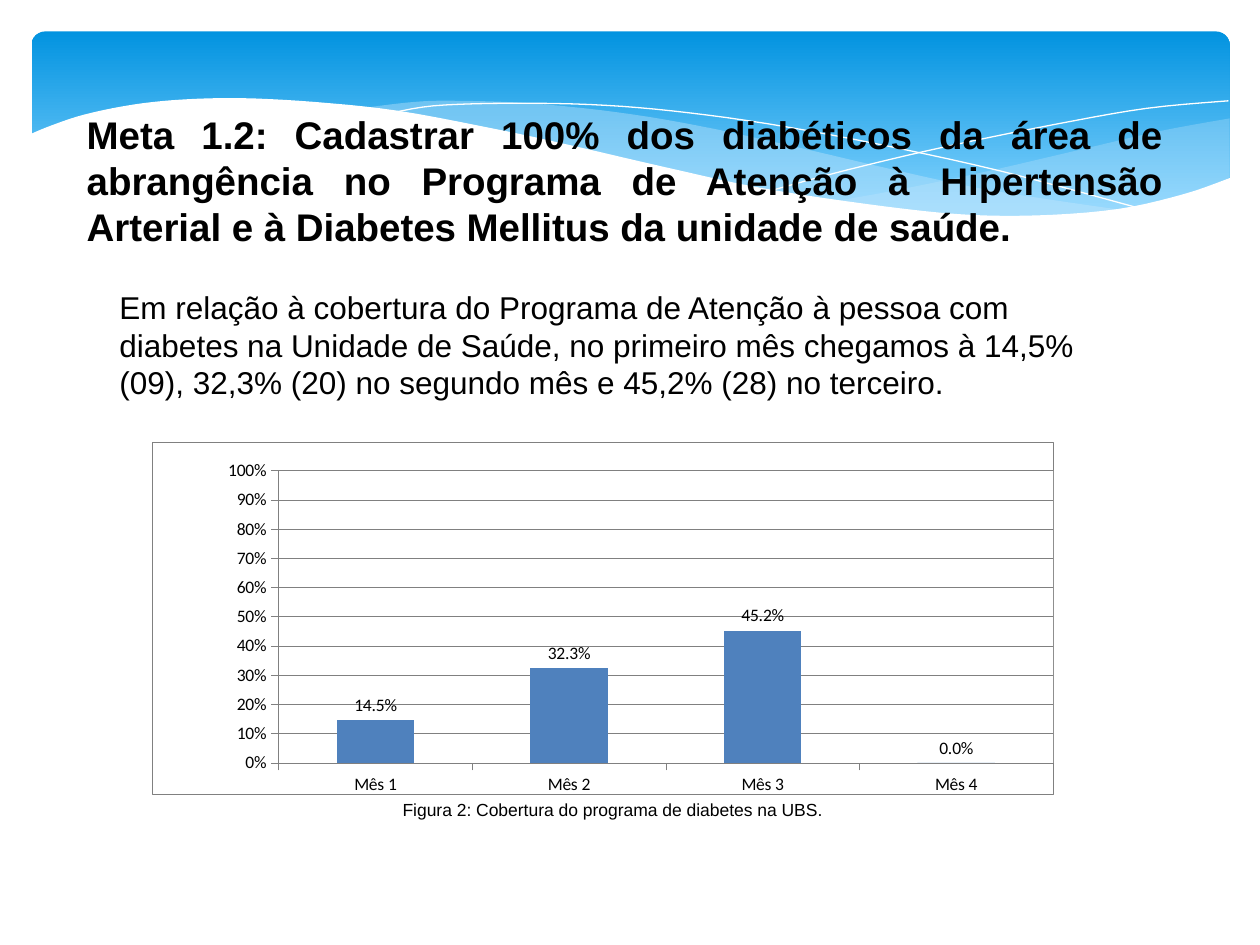
from lxml.etree import SubElement
from pptx import Presentation
from pptx.chart.data import CategoryChartData
from pptx.dml.color import RGBColor
from pptx.enum.chart import XL_CHART_TYPE, XL_LABEL_POSITION, XL_TICK_MARK
from pptx.enum.shapes import MSO_SHAPE
from pptx.enum.text import MSO_ANCHOR, PP_ALIGN
from pptx.oxml import parse_xml
from pptx.oxml.ns import nsdecls, qn
from pptx.util import Inches, Pt

WIDTH, HEIGHT = Inches(10), Inches(7.5)
COLORS = {"sky": "0293E0", "pale sky": "83D3FE", "mist": "C6E7FC", "white": "FFFFFF",
          "black": "000000", "gray": "808080", "bar": "4F81BD"}

# Curve points, in percent of the slide's width and height
RIGHT_WAVE_TOP = [(97.6, 12.53), (92.1, 13.87), (86.1, 15.73), (77.9, 18.27),
                  (70.6, 20.27), (66.1, 21.33)]
RIGHT_WAVE_BOTTOM = [(66.1, 21.33), (71.9, 22.27), (76.9, 22.8), (81.4, 22.93),
                     (86.3, 22.67), (91.3, 21.73), (94.9, 20.27), (97.6, 18.8)]
MIDDLE_WAVE_TOP = [(28.6, 11.47), (32.8, 10.8), (36.1, 10.67), (42, 10.93), (48.9, 11.87),
                   (55.5, 13.33), (62.9, 15.47), (70.6, 17.87), (77.5, 19.87),
                   (83.7, 21.2), (89.3, 22.27)]
MIDDLE_WAVE_BOTTOM = [(89.3, 22.27), (84.8, 22.8), (80.7, 23.07), (74.8, 22.67), (68, 21.73),
                      (60.1, 20), (53, 18), (44.9, 15.47), (38.3, 13.47), (34.2, 12.53),
                      (28.6, 11.47)]
FALLING_LINE = [(30.9, 12), (34.4, 11.2), (40.1, 10.93), (46.9, 11.07), (53.3, 11.73),
                (60.8, 13.07), (69.5, 15.2), (79.5, 18.13), (90.7, 22.13)]
RISING_LINE = [(61.3, 20.13), (67.2, 18), (74.8, 15.6), (83.6, 13.2), (91, 11.47),
               (97.5, 10.67)]
WHITE_WAVE_TOP = [(2.3, 14.27), (4, 13.33), (6.7, 12.13), (10.6, 11.07), (14.6, 10.53),
                  (19.3, 10.4), (25, 10.8), (31.6, 11.73), (39.1, 13.6), (44.7, 15.2),
                  (52.9, 17.73), (60.3, 19.87), (68.8, 21.6), (76.1, 22.67), (82.3, 22.8),
                  (88.7, 22.13), (94, 20.53), (97.7, 18.8)]
WHITE_WAVE_BASE = [(97.7, 29.87), (2.3, 29.87)]


def color(name):
    return RGBColor.from_string(COLORS[name])


def place(left, top, *size):
    """Turn percents of the slide's width and height into lengths."""
    return [int(share * side / 100)
            for share, side in zip((left, top, *size), (WIDTH, HEIGHT) * 2)]


def smooth_curve(points, steps=5):
    """Fill in a Catmull-Rom curve through the points."""
    padded = [points[0], *points, points[-1]]
    curve = [points[0]]
    for a, b, c, d in zip(padded, padded[1:], padded[2:], padded[3:]):
        for step in range(1, steps + 1):
            t = step / steps
            curve.append(tuple(
                (2 * q + (r - p) * t + (2 * p - 5 * q + 4 * r - s) * t ** 2
                 + (3 * q - p - 3 * r + s) * t ** 3) / 2
                for p, q, r, s in zip(a, b, c, d)))
    return curve


def add_outline(slide, points, closed):
    start, *rest = [place(*point) for point in points]
    builder = slide.shapes.build_freeform(*start)
    builder.add_line_segments(rest, close=closed)
    shape = builder.convert_to_shape()
    shape.shadow.inherit = False
    return shape


def add_wave(slide, points, fill, opacity=100):
    shape = add_outline(slide, points, True)
    shape.fill.solid()
    shape.fill.fore_color.rgb = color(fill)
    shape.line.fill.background()
    if opacity < 100:
        solid_color = shape.fill._xPr.find(qn("a:solidFill"))[0]
        SubElement(solid_color, qn("a:alpha"), val=str(opacity * 1000))


def add_curved_line(slide, points):
    shape = add_outline(slide, smooth_curve(points), False)
    shape.fill.background()
    shape.line.color.rgb = color("white")
    shape.line.width = Pt(0)


def add_banner(slide):
    shape = slide.shapes.add_shape(MSO_SHAPE.ROUNDED_RECTANGLE, *place(2.5, 3.33, 95.1, 20.8))
    shape.shadow.inherit = False
    shape.adjustments[0] = 0.07
    shape.line.fill.background()
    shape.fill.gradient()
    shape.fill.gradient_angle = 270
    for stop, name, position in zip(shape.fill.gradient_stops, ("sky", "pale sky"), (0, 0.9)):
        stop.color.rgb = color(name)
        stop.position = position


def add_text(slide, text, box, size, alignment=PP_ALIGN.LEFT, bold=False,
             anchor=MSO_ANCHOR.TOP):
    text_frame = slide.shapes.add_textbox(*place(*box)).text_frame
    text_frame.word_wrap = True
    text_frame.vertical_anchor = anchor
    text_frame.text = text
    paragraph = text_frame.paragraphs[0]
    paragraph.alignment = alignment
    set_font(paragraph.runs[0].font, "Arial", size, bold)


def set_font(font, name, size, bold=False):
    font.name = name
    font.size = Pt(size)
    font.bold = bold
    font.color.rgb = color("black")


def set_thin_line(line):
    line.color.rgb = color("gray")
    line.width = Pt(0.25)


def area_format(border):
    """Return chart area properties: white fill and a gray or no border."""
    line = f'<a:solidFill><a:srgbClr val="{COLORS["gray"]}"/></a:solidFill>'
    return parse_xml(
        f'<c:spPr {nsdecls("c", "a")}><a:solidFill><a:srgbClr val="{COLORS["white"]}"/>'
        f'</a:solidFill><a:ln w="{Pt(0.25)}">{line if border else "<a:noFill/>"}</a:ln></c:spPr>')


def set_plot_layout(plot_area, x, y, w, h):
    for layout in plot_area.findall(qn("c:layout")):
        plot_area.remove(layout)
    sizes = "".join(f'<c:{tag} val="{share}"/>'
                    for tag, share in (("x", x), ("y", y), ("w", w), ("h", h)))
    plot_area.insert(0, parse_xml(
        f'<c:layout {nsdecls("c")}><c:manualLayout><c:layoutTarget val="inner"/>'
        f'<c:xMode val="edge"/><c:yMode val="edge"/>{sizes}</c:manualLayout></c:layout>'))


def add_coverage_chart(slide):
    data = CategoryChartData(number_format="0.0%")
    data.categories = [f"Mês {month}" for month in range(1, 5)]
    data.add_series("Series 1", (0.145, 0.323, 0.452, 0))
    chart = slide.shapes.add_chart(XL_CHART_TYPE.COLUMN_CLUSTERED,
                                   *place(12.1, 46.8, 71.5, 37.33), data).chart
    chart.has_title = False
    chart.has_legend = False
    set_font(chart.font, "Calibri", 10)

    for axis in (chart.category_axis, chart.value_axis):
        axis.major_tick_mark = XL_TICK_MARK.OUTSIDE
        set_font(axis.tick_labels.font, "Calibri", 10)
        set_thin_line(axis.format.line)
    axis = chart.value_axis
    axis.minimum_scale, axis.maximum_scale, axis.major_unit = 0, 1, 0.1
    axis.tick_labels.number_format = "0%"
    axis.tick_labels.number_format_is_linked = False
    set_thin_line(axis.major_gridlines.format.line)

    plot = chart.plots[0]
    plot.gap_width = 150
    plot.vary_by_categories = False
    fill = plot.series[0].format.fill
    fill.solid()
    fill.fore_color.rgb = color("bar")
    labels = plot.series[0].data_labels
    labels.show_value = True
    labels.number_format = "0.0%"
    labels.number_format_is_linked = False
    labels.position = XL_LABEL_POSITION.OUTSIDE_END
    set_font(labels.font, "Calibri", 10)

    chart_element = chart._chartSpace.find(qn("c:chart"))
    chart_element.addnext(area_format(border=True))
    plot_area = chart_element.find(qn("c:plotArea"))
    plot_area.append(area_format(border=False))
    set_plot_layout(plot_area, 0.14, 0.08, 0.86, 0.83)


def main():
    presentation = Presentation()
    presentation.slide_width, presentation.slide_height = WIDTH, HEIGHT
    slide = presentation.slides.add_slide(presentation.slide_layouts[6])
    add_banner(slide)
    add_wave(slide, smooth_curve(RIGHT_WAVE_TOP) + smooth_curve(RIGHT_WAVE_BOTTOM), "mist", 29)
    add_wave(slide, smooth_curve(MIDDLE_WAVE_TOP) + smooth_curve(MIDDLE_WAVE_BOTTOM), "mist", 40)
    add_curved_line(slide, FALLING_LINE)
    add_curved_line(slide, RISING_LINE)
    add_wave(slide, smooth_curve(WHITE_WAVE_TOP) + WHITE_WAVE_BASE, "white")
    add_coverage_chart(slide)
    add_text(slide, "Figura 2: Cobertura do programa de diabetes na UBS.",
             (18.6, 84, 60, 3.4), 10, PP_ALIGN.CENTER, anchor=MSO_ANCHOR.MIDDLE)
    add_text(slide, "Em relação à cobertura do Programa de Atenção à pessoa com diabetes na "
             "Unidade de Saúde, no primeiro mês chegamos à 14,5% (09), 32,3% (20) no segundo "
             "mês e 45,2% (28) no terceiro.", (8.5, 29.8, 78.7, 13.4), 18)
    add_text(slide, "Meta 1.2: Cadastrar 100% dos diabéticos da área de abrangência no Programa "
             "de Atenção à Hipertensão Arterial e à Diabetes Mellitus da unidade de saúde.",
             (5.9, 11.1, 87.4, 16.1), 22, PP_ALIGN.JUSTIFY, bold=True)
    presentation.save("out.pptx")


if __name__ == "__main__":
    main()
